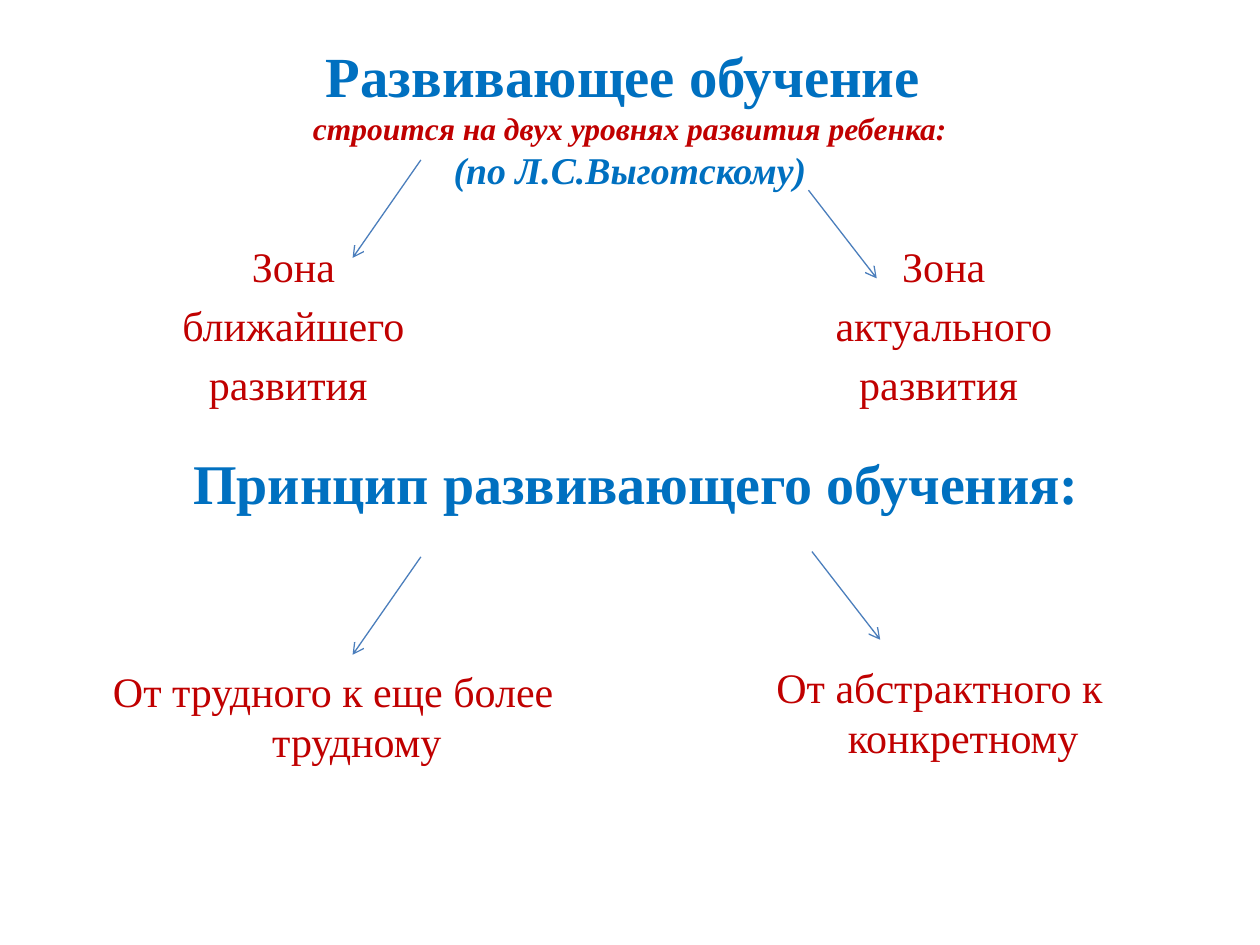
from lxml import etree
from pptx import Presentation
from pptx.dml.color import RGBColor
from pptx.enum import shapes, text
from pptx.oxml import ns
from pptx.util import Pt

BLUE = RGBColor(0x00, 0x70, 0xC0)
RED = RGBColor(0xC0, 0x00, 0x00)
ARROW_BLUE = RGBColor(0x4B, 0x7E, 0xBC)
FONT = "Times New Roman"
HANGING_INDENT = 27
LEFT_ARROW = (-39, 56)
RIGHT_ARROW = (39, 50.4)


def place(shape, box):
    shape.left, shape.top, shape.width, shape.height = (Pt(v) for v in box)


def style(font, size, color, bold=False, italic=None):
    font.name = FONT
    font.size = Pt(size)
    font.color.rgb = color
    font.bold = bold
    font.italic = italic


def add_title(page, box):
    title = page.shapes.title
    place(title, box)
    frame = title.text_frame
    frame.auto_size = text.MSO_AUTO_SIZE.NONE
    frame.vertical_anchor = text.MSO_ANCHOR.MIDDLE
    para = frame.paragraphs[0]
    para.alignment = text.PP_ALIGN.CENTER
    lines = [
        ("Развивающее обучение ", 32.4, BLUE, False),
        ("строится на двух уровнях развития ребенка:", 18, RED, True),
        ("(по Л.С.Выготскому)", 21.6, BLUE, True),
    ]
    for number, (words, size, color, italic) in enumerate(lines):
        if number:
            para.add_line_break()
        span = para.add_run()
        span.text = words
        style(span.font, size, color, True, italic)


def add_text(page, box, lines, size, color, bold=False, hanging=0):
    frame = page.shapes.add_textbox(*(Pt(v) for v in box)).text_frame
    frame.word_wrap = True
    for number, line in enumerate(lines):
        para = frame.add_paragraph() if number else frame.paragraphs[0]
        para.text = line
        para.alignment = text.PP_ALIGN.CENTER
        if number:
            para.space_before = Pt(size * 0.2)
        if hanging:
            properties = para._p.get_or_add_pPr()
            properties.set("marL", str(Pt(hanging)))
            properties.set("indent", str(Pt(-hanging)))
        style(para.font, size, color, bold)
    return frame


def add_arrow(page, start, step):
    (x, y), (dx, dy) = start, step
    arrow = page.shapes.add_connector(
        shapes.MSO_CONNECTOR.STRAIGHT, Pt(x), Pt(y), Pt(x + dx), Pt(y + dy))
    arrow.line.color.rgb = ARROW_BLUE
    arrow.line.width = Pt(0.75)
    etree.SubElement(arrow.line._get_or_add_ln(), ns.qn("a:tailEnd"), type="arrow")
    etree.SubElement(arrow._element.spPr, ns.qn("a:effectLst"))


def add_branches(page, box, label_size, label_drops, arrow_starts, labels):
    """Two arrows that lead down to labels at the left and right of the box."""
    left, top, width, _ = box
    label_width, label_height = label_size
    label_lefts = (left, left + width - label_width)
    steps = (LEFT_ARROW, RIGHT_ARROW)
    for x, drop, (dx, dy), step, lines in zip(
            label_lefts, label_drops, arrow_starts, steps, labels):
        add_arrow(page, (left + dx, top + dy), step)
        add_text(page, (x, top + drop, label_width, label_height), lines,
                 24, RED, hanging=HANGING_INDENT)


def add_principle(page, box):
    frame = add_text(page, box, ["Принцип развивающего обучения:"], 32, BLUE, bold=True)
    frame.margin_top = 0


def main():
    deck = Presentation()
    deck.slide_width, deck.slide_height = Pt(720), Pt(540)
    page = deck.slides.add_slide(deck.slide_layouts[5])
    add_title(page, (36, 21.6, 648, 90))
    add_branches(
        page, (41, 91.4, 625, 165), (253.4, 122.4), (42.6, 42.6),
        ((199.5, 0), (421, 17.3)),
        (("Зона", "ближайшего", "развития "), ("Зона", "актуального", "развития ")))
    add_principle(page, (39.6, 256.3, 648, 78.5))
    add_branches(
        page, (30.2, 315.2, 666.8, 151.4), (320.4, 90), (61.4, 59.2),
        ((210.3, 3), (433.8, 0)),
        (("От трудного к еще более трудному",), ("От абстрактного к конкретному",)))
    deck.save("out.pptx")


if __name__ == "__main__":
    main()
